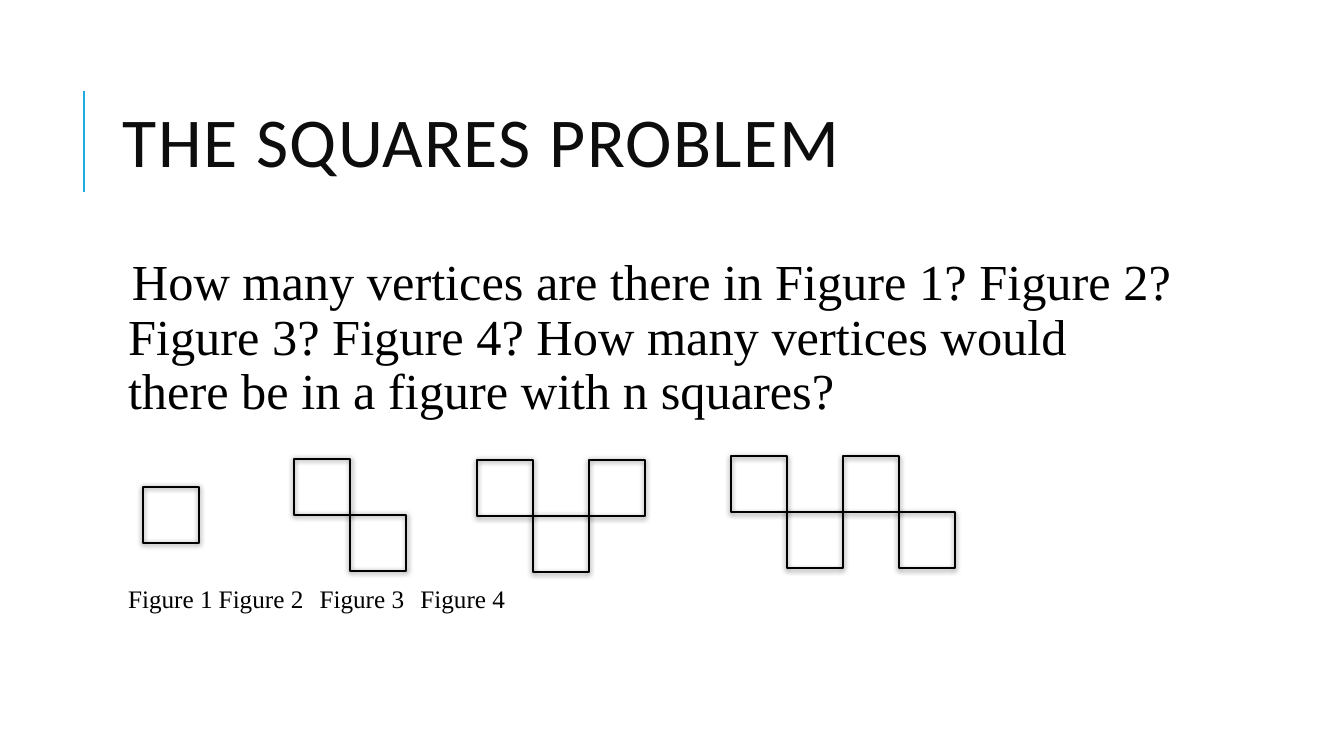
from lxml import etree
from pptx import Presentation
from pptx.dml.color import RGBColor
from pptx.enum import shapes, text
from pptx.oxml import ns
from pptx.util import Pt

TITLE = "THE SQUARES PROBLEM"
QUESTION = ("How many vertices are there in Figure 1? Figure 2? Figure 3? Figure 4? "
            "How many vertices would there be in a figure with n squares?")
CAPTIONS = ["Figure 1", "Figure 2", "Figure 3", "Figure 4"]
CAPTION_STOPS = [144, 288, 504]
FIGURE_CORNERS = [(102.2, 347.8), (210.3, 327.6), (340.6, 328.7), (522, 326)]
SIDE = 40
INDENT = 7.2
ACCENT, INK, BLACK = "1CADE4", "0D0D0D", "000000"


def color(value):
    return RGBColor.from_string(value)


def add_xml(parent, tag, **attributes):
    return etree.SubElement(parent, ns.qn(tag), attributes)


def place(shape, left, top, width, height):
    shape.left, shape.top = Pt(left), Pt(top)
    shape.width, shape.height = Pt(width), Pt(height)


def style(para, font, size, ink, spacing):
    para.font.name, para.font.size = font, Pt(size)
    para.font.color.rgb = color(ink)
    para.line_spacing = spacing


def indent(para, left, first):
    props = para._p.get_or_add_pPr()
    props.set("marL", str(Pt(left)))
    props.set("indent", str(Pt(first)))
    return props


def add_square(container, left, top):
    square = container.add_shape(shapes.MSO_SHAPE.RECTANGLE, Pt(left), Pt(top), Pt(SIDE), Pt(SIDE))
    square.fill.background()
    square.line.color.rgb = color(BLACK)
    square.line.width = Pt(1.5)
    square.shadow.inherit = False
    effects = square._element.spPr.find(ns.qn("a:effectLst"))
    shadow = add_xml(effects, "a:outerShdw", blurRad=str(Pt(4)), dist=str(Pt(1)),
                     dir="5400000", rotWithShape="0")
    add_xml(add_xml(shadow, "a:srgbClr", val=BLACK), "a:alpha", val="50000")


deck = Presentation()
deck.slide_width, deck.slide_height = Pt(960), Pt(540)
slide = deck.slides.add_slide(deck.slide_layouts[1])
title, body = slide.shapes.title, slide.placeholders[1]

rule = slide.shapes.add_connector(shapes.MSO_CONNECTOR.STRAIGHT, Pt(60), Pt(137), Pt(60), Pt(65))
rule.line.color.rgb = color(ACCENT)
rule.line.width = Pt(1.5)
add_xml(rule._element.spPr, "a:effectLst")

place(title, 80.64, 46, 765.4, 118)
title.text_frame.text = TITLE
title.text_frame.vertical_anchor = text.MSO_ANCHOR.MIDDLE
heading = title.text_frame.paragraphs[0]
heading.alignment = text.PP_ALIGN.LEFT
style(heading, "Calibri", 50, INK, 0.8)
heading.runs[0].font._element.set("spc", "100")

place(body, 80.64, 180, 765.4, 316.8)
frame = body.text_frame
frame.margin_left = frame.margin_right = frame.margin_top = frame.margin_bottom = Pt(3.6)
frame.text = QUESTION
question, captions = frame.paragraphs[0], frame.add_paragraph()
captions.text = "\t".join(CAPTIONS)
for para, size, before in [(question, 36, 12), (captions, 18, 117)]:
    style(para, "Times New Roman", size, BLACK, 0.9)
    para.space_before, para.space_after = Pt(before), Pt(2)

bullet = etree.Element(ns.qn("a:buChar"), char=" ")
indent(question, INDENT, -INDENT).insert_element_before(bullet, "a:tabLst", "a:defRPr", "a:extLst")
caption_props = indent(captions, 0, INDENT)
for tag in ("a:buNone", "a:tabLst"):
    caption_props.insert_element_before(etree.Element(ns.qn(tag)), "a:defRPr", "a:extLst")
for stop in CAPTION_STOPS:
    add_xml(caption_props.find(ns.qn("a:tabLst")), "a:tab", pos=str(Pt(stop)), algn="l")

for count, (left, top) in enumerate(FIGURE_CORNERS, start=1):
    container = slide.shapes.add_group_shape().shapes if count > 1 else slide.shapes
    for i in range(count):
        add_square(container, left + i * SIDE, top + i % 2 * SIDE)

deck.save("out.pptx")
